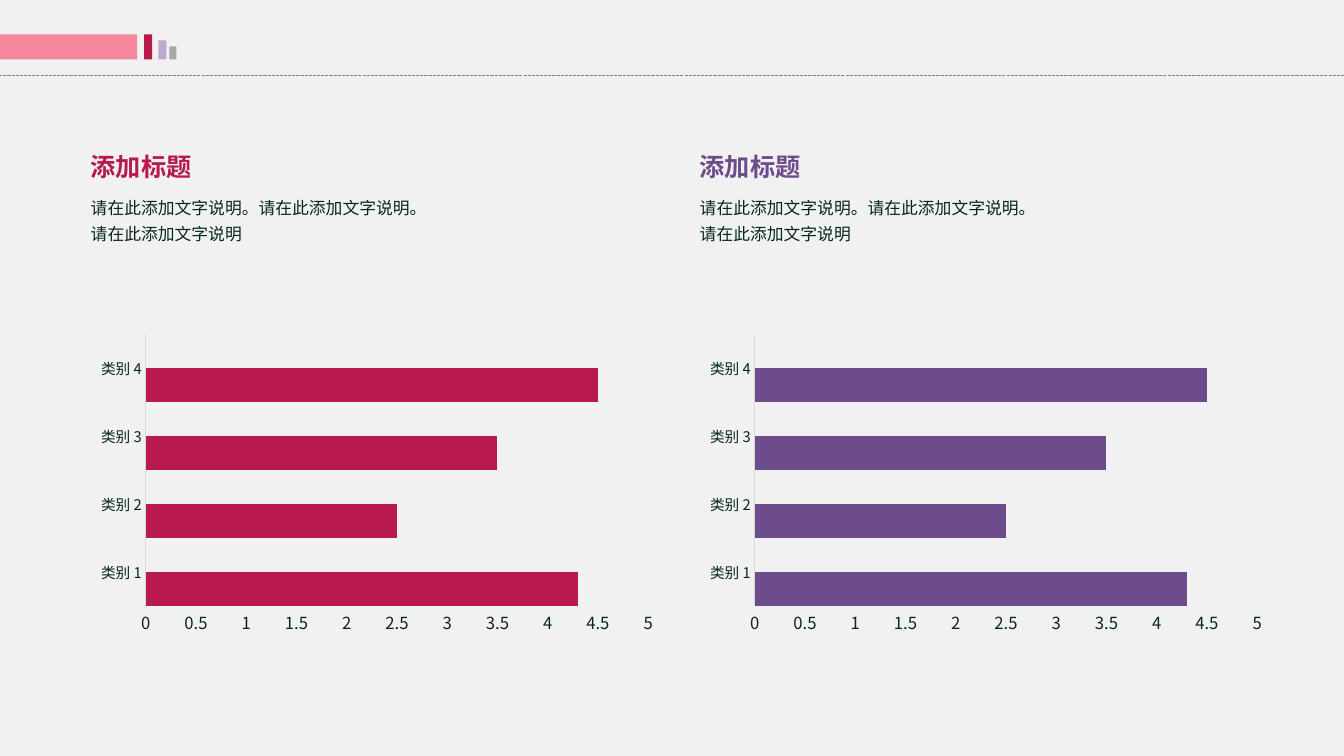
from lxml import etree
from pptx import Presentation
from pptx.chart.data import CategoryChartData
from pptx.dml.color import RGBColor
from pptx.enum.chart import XL_CHART_TYPE, XL_TICK_MARK
from pptx.enum.dml import MSO_LINE
from pptx.enum.shapes import MSO_CONNECTOR, MSO_SHAPE
from pptx.enum.text import MSO_ANCHOR, MSO_AUTO_SIZE, PP_ALIGN
from pptx.oxml.ns import qn
from pptx.util import Inches, Pt

BAR_CHART = XL_CHART_TYPE.BAR_CLUSTERED
NO_TICK = XL_TICK_MARK.NONE
SYS_DASH = MSO_LINE.SQUARE_DOT
STRAIGHT = MSO_CONNECTOR.STRAIGHT
RECTANGLE = MSO_SHAPE.RECTANGLE
TOP = MSO_ANCHOR.TOP
GROW = MSO_AUTO_SIZE.SHAPE_TO_FIT_TEXT
LEFT = PP_ALIGN.LEFT

PAPER = RGBColor(0xF1, 0xF1, 0xF1)
RULE_GRAY = RGBColor(0x80, 0x80, 0x80)
AXIS_GRAY = RGBColor(0xD9, 0xD9, 0xD9)
GRAY = RGBColor(0xA6, 0xA6, 0xA6)
CRIMSON = RGBColor(0xB8, 0x1A, 0x4D)
PINK = RGBColor(0xF4, 0x87, 0x9C)
LILAC = RGBColor(0xBD, 0xA8, 0xD1)
PURPLE = RGBColor(0x6C, 0x4C, 0x8B)
NAVY = RGBColor(0x0D, 0x46, 0x77)
AMBER = RGBColor(0xEC, 0xAF, 0x45)
INK = RGBColor(0x07, 0x27, 0x1E)
BLACK = RGBColor(0, 0, 0)

FONT = "Noto Sans CJK SC"
CHART_FONT = "Noto Sans CJK KR"
HEADING_FONT = {"name": FONT, "size": Pt(18), "bold": True}
BODY_FONT = {"name": FONT, "size": Pt(12), "bold": False}
CATEGORY_FONT = {"name": FONT, "size": Pt(10.5)}
VALUE_FONT = {"name": FONT, "size": Pt(11.9)}
BASE_FONT = {"name": CHART_FONT, "size": Pt(10)}
FRAME_FORMAT = {"word_wrap": True, "auto_size": GROW, "vertical_anchor": TOP}
VALUE_AXIS_FORMAT = {
    "minimum_scale": 0, "maximum_scale": 5, "major_unit": 0.5,
    "has_major_gridlines": False,
}

HEADING = "添加标题"
DESCRIPTION = "请在此添加文字说明。请在此添加文字说明。请在此添加文字说明"
CATEGORIES = [f"类别 {number}" for number in range(1, 5)]
VALUES = [4.3, 2.5, 3.5, 4.5]
PANEL_LEFT = 0.8
PANEL_PITCH = 6.04

# left, top, width, height, colour
HEADER_BLOCKS = [
    (1.43, 0.34, 0.08, 0.25, CRIMSON),
    (1.68, 0.46, 0.07, 0.13, GRAY),
    (-0.03, 0.34, 1.39, 0.25, PINK),
    (1.57, 0.4, 0.08, 0.19, LILAC),
]
# Inner plot area as fractions of the chart frame
PLOT_LAYOUT = {"x": 0.104, "y": 0.02, "w": 0.868, "h": 0.868}


def apply_format(target, values):
    for attribute, value in values.items():
        setattr(target, attribute, value)


def style_font(font, values, color):
    apply_format(font, values)
    font.color.rgb = color


def match_east_asian_font(element):
    for latin in list(element.iter(qn("a:latin"))):
        east_asian = etree.Element(qn("a:ea"), typeface=latin.get("typeface"))
        latin.addnext(east_asian)


def place(shape, left, top, width, height):
    apply_format(shape, {
        "left": Inches(left), "top": Inches(top),
        "width": Inches(width), "height": Inches(height),
    })


def add_header(slide):
    rule = slide.shapes.add_connector(
        STRAIGHT, Inches(13.33), Inches(0.75), Inches(0), Inches(0.75))
    rule.line.color.rgb = RULE_GRAY
    apply_format(rule.line, {"width": Pt(0.75), "dash_style": SYS_DASH})
    etree.SubElement(rule.element.spPr, qn("a:effectLst"))

    blocks = slide.shapes.add_group_shape()
    for *box, color in HEADER_BLOCKS:
        block = blocks.shapes.add_shape(RECTANGLE, *map(Inches, box))
        block.shadow.inherit = False
        block.fill.solid()
        block.fill.fore_color.rgb = color
        block.line.fill.background()


def fill_text(placeholder, box, text, font_format, color, line_spacing):
    place(placeholder, *box)
    frame = placeholder.text_frame
    apply_format(frame, FRAME_FORMAT)
    paragraph = frame.paragraphs[0]
    properties = paragraph._p.get_or_add_pPr()
    apply_format(paragraph, {
        "alignment": LEFT, "line_spacing": line_spacing, "space_before": Pt(0),
    })
    properties.set("marL", "0")
    properties.set("indent", "0")
    etree.SubElement(properties, qn("a:buNone"))
    run = paragraph.add_run()
    run.text = text
    style_font(run.font, font_format, color)
    match_east_asian_font(placeholder.element)


def set_plot_layout(chart):
    plot_area = chart.element.find(".//" + qn("c:plotArea"))
    layout = plot_area.find(qn("c:layout"))
    if layout is None:
        layout = etree.Element(qn("c:layout"))
        plot_area.insert(0, layout)
    manual = etree.SubElement(layout, qn("c:manualLayout"))
    settings = {"layoutTarget": "inner", "xMode": "edge", "yMode": "edge"}
    for tag, value in (settings | PLOT_LAYOUT).items():
        etree.SubElement(manual, qn("c:" + tag), val=str(value))


def add_bar_chart(slide, left, color):
    data = CategoryChartData()
    data.categories = CATEGORIES
    empty = [None] * len(CATEGORIES)
    for number, values in enumerate((VALUES, empty, empty), 1):
        data.add_series(f"Series {number}", values)
    chart = slide.shapes.add_chart(
        BAR_CHART, Inches(left), Inches(3.25), Inches(5.74), Inches(3.11),
        data).chart
    apply_format(chart, {"has_legend": False, "has_title": False})
    style_font(chart.font, BASE_FONT, BLACK)

    # The two empty series keep their room below each label
    plot = chart.plots[0]
    apply_format(plot, {
        "gap_width": 0, "overlap": 50, "vary_by_categories": False,
    })
    for series, series_color in zip(plot.series, (color, NAVY, AMBER)):
        series.format.fill.solid()
        series.format.fill.fore_color.rgb = series_color

    axes = (chart.category_axis, CATEGORY_FONT), (chart.value_axis, VALUE_FONT)
    for axis, font_format in axes:
        apply_format(axis, {
            "major_tick_mark": NO_TICK, "minor_tick_mark": NO_TICK,
        })
        style_font(axis.tick_labels.font, font_format, INK)
    apply_format(chart.value_axis, VALUE_AXIS_FORMAT)
    chart.value_axis.format.line.fill.background()
    category_line = chart.category_axis.format.line
    category_line.color.rgb = AXIS_GRAY
    category_line.width = Pt(0.75)
    set_plot_layout(chart)
    match_east_asian_font(chart.element)


def add_panel(slide, heading, description, left, color):
    fill_text(heading, (left, 1.45, 1.42, 0.4), HEADING, HEADING_FONT, color, 1)
    fill_text(description, (left, 1.85, 3.37, 0.62), DESCRIPTION, BODY_FONT,
              INK, 1.3)
    add_bar_chart(slide, left + 0.05, color)


def main():
    deck = Presentation()
    deck.slide_width = Inches(13.33)
    deck.slide_height = Inches(7.5)
    comparison_layout = deck.slide_layouts[4]
    slide = deck.slides.add_slide(comparison_layout)
    slide.background.fill.solid()
    slide.background.fill.fore_color.rgb = PAPER

    # Each panel has its own heading, so the slide title goes unused
    title, *panel_texts = slide.placeholders
    title.element.getparent().remove(title.element)

    add_header(slide)
    for index, color in enumerate((CRIMSON, PURPLE)):
        heading, description = panel_texts[2 * index:2 * index + 2]
        add_panel(slide, heading, description,
                  PANEL_LEFT + index * PANEL_PITCH, color)
    deck.save("out.pptx")


if __name__ == "__main__":
    main()
